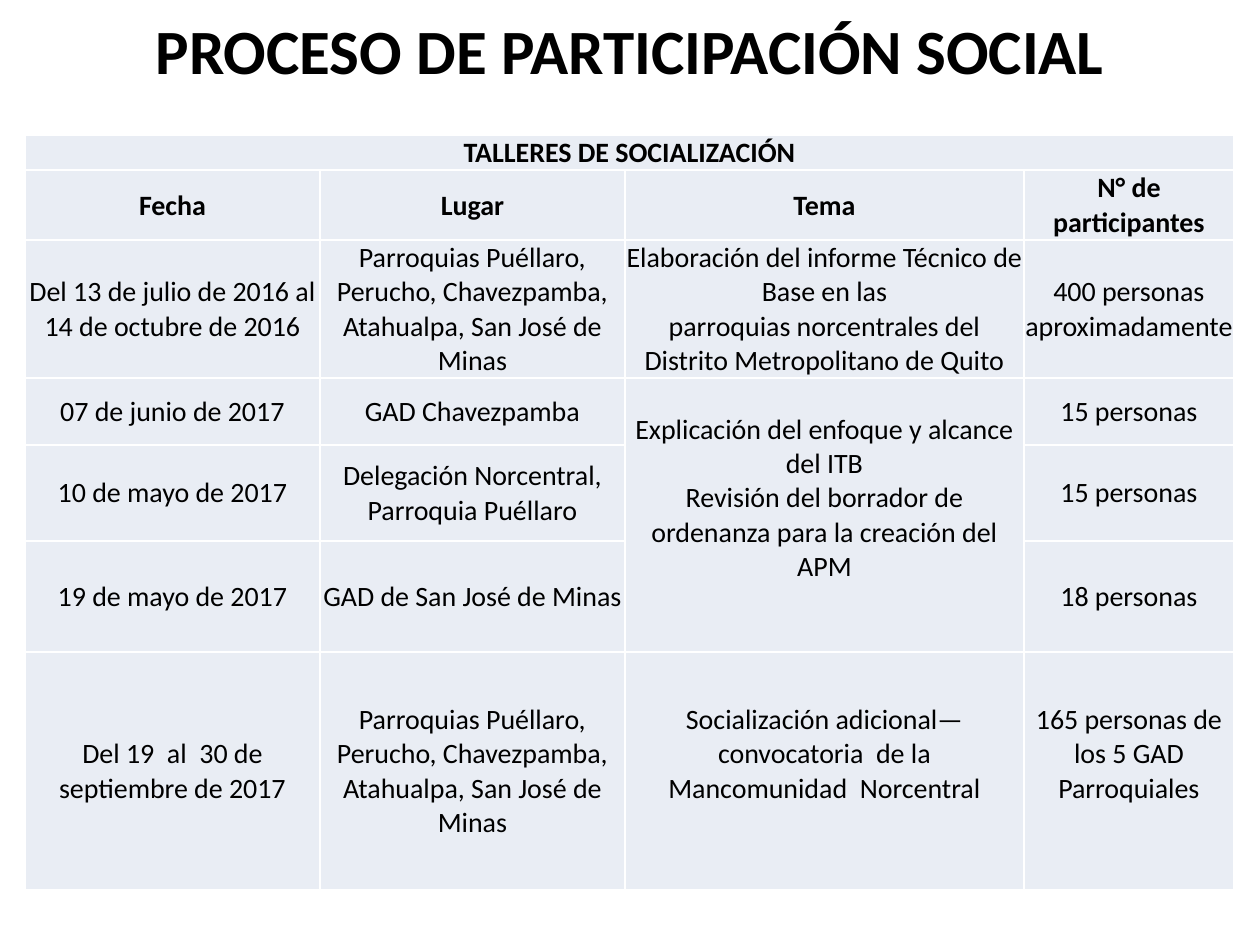
from lxml import etree
from pptx import Presentation
from pptx.dml.color import RGBColor
from pptx.enum.text import MSO_ANCHOR, PP_ALIGN
from pptx.oxml.ns import qn
from pptx.util import Pt

PX = 914400 // 126
MIDDLE = MSO_ANCHOR.MIDDLE
CENTER = PP_ALIGN.CENTER
BLACK = RGBColor(0x00, 0x00, 0x00)
WHITE = RGBColor(0xFF, 0xFF, 0xFF)
PALE = RGBColor(0xE9, 0xED, 0xF4)
FONT = "Calibri"
LINE = 34  # height of one line of table text

COLS = [295, 305, 399, 210]
TOWNS = "Parroquias Puéllaro, Perucho, Chavezpamba, Atahualpa, San José de Minas"
ROWS = [
    (35, ["TALLERES DE SOCIALIZACIÓN", "", "", ""]),
    (70, ["Fecha", "Lugar", "Tema", "N° de participantes"]),
    (138, ["Del 13 de julio de 2016 al 14 de octubre de 2016", TOWNS,
           "Elaboración del informe Técnico de Base en las\n"
           "parroquias norcentrales del Distrito Metropolitano de Quito",
           "400 personas aproximadamente"]),
    (67, ["07 de junio de 2017", "GAD Chavezpamba",
          "Explicación del enfoque y alcance del ITB\n"
          "Revisión del borrador de ordenanza para la creación del APM",
          "15 personas"]),
    (96, ["10 de mayo de 2017", "Delegación Norcentral, Parroquia Puéllaro",
          "", "15 personas"]),
    (111, ["19 de mayo de 2017", "GAD de San José de Minas", "", "18 personas"]),
    (238, ["Del 19  al  30 de septiembre de 2017", TOWNS,
           "Socialización adicional—convocatoria  de la Mancomunidad  Norcentral",
           "165 personas de los 5 GAD Parroquiales"]),
]
HEADS = 2
RAISED = {(3, 2), (6, 2), (6, 3)}  # cells whose text sits half a line high


def style(frame, size, bold):
    for par in frame.paragraphs:
        par.alignment = CENTER
        par.font.name = FONT
        par.font.size = Pt(size)
        par.font.bold = bold
        par.font.color.rgb = BLACK


def edge(cell):
    """Give the cell thin white borders, placed before its fill."""
    props = cell._tc.get_or_add_tcPr()
    for i, side in enumerate(("a:lnL", "a:lnR", "a:lnT", "a:lnB")):
        line = etree.Element(qn(side), w=str(Pt(1)))
        fill = etree.SubElement(line, qn("a:solidFill"))
        etree.SubElement(fill, qn("a:srgbClr"), val=str(WHITE))
        props.insert(i, line)


def add_title(slide, left, top, width, height):
    box = slide.shapes.add_textbox(left * PX, top * PX, width * PX, height * PX)
    frame = box.text_frame
    frame.word_wrap = True
    frame.vertical_anchor = MIDDLE
    frame.text = "PROCESO DE PARTICIPACIÓN SOCIAL"
    style(frame, 36, True)


def add_talks(slide, left, top):
    """Place the table of workshops with its corner at left, top."""
    width, height = sum(COLS), sum(h for h, _ in ROWS)
    table = slide.shapes.add_table(len(ROWS), len(COLS), left * PX, top * PX,
                                   width * PX, height * PX).table
    table.first_row = table.horz_banding = False
    for col, w in zip(table.columns, COLS):
        col.width = w * PX
    for r, (h, texts) in enumerate(ROWS):
        table.rows[r].height = h * PX
        for c, text in enumerate(texts):
            cell = table.cell(r, c)
            cell.margin_left = cell.margin_right = cell.margin_top = PX
            cell.margin_bottom = LINE * PX if (r, c) in RAISED else 0
            cell.vertical_anchor = MIDDLE
            cell.text = text
            style(cell.text_frame, 16, r < HEADS)
            cell.fill.solid()
            cell.fill.fore_color.rgb = PALE
            edge(cell)
    table.cell(0, 0).vertical_anchor = MSO_ANCHOR.BOTTOM
    table.cell(0, 0).merge(table.cell(0, 3))
    table.cell(3, 2).merge(table.cell(5, 2))


def main():
    deck = Presentation()
    deck.slide_width, deck.slide_height = 1260 * PX, 945 * PX
    slide = deck.slides.add_slide(deck.slide_layouts[6])
    add_title(slide, 63, 6, 1134, 87)
    add_talks(slide, 25, 135)
    deck.save("out.pptx")


if __name__ == "__main__":
    main()
